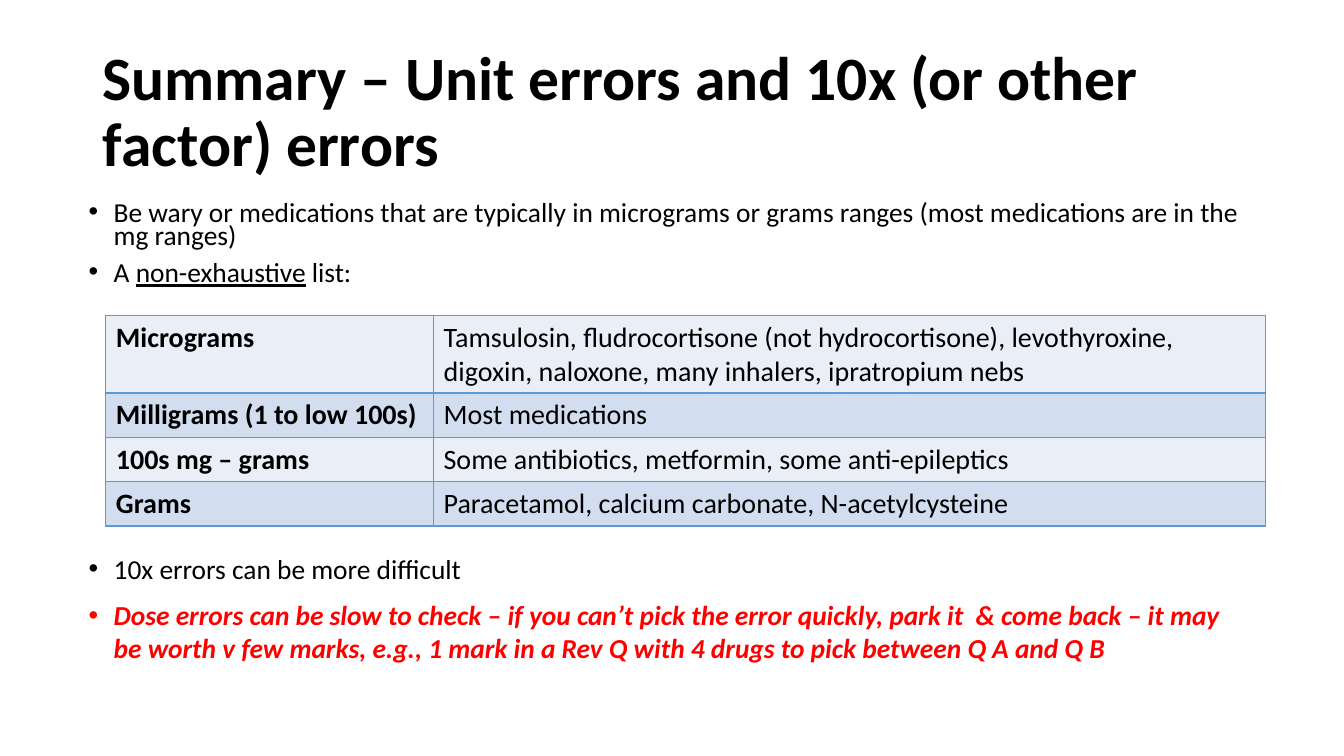
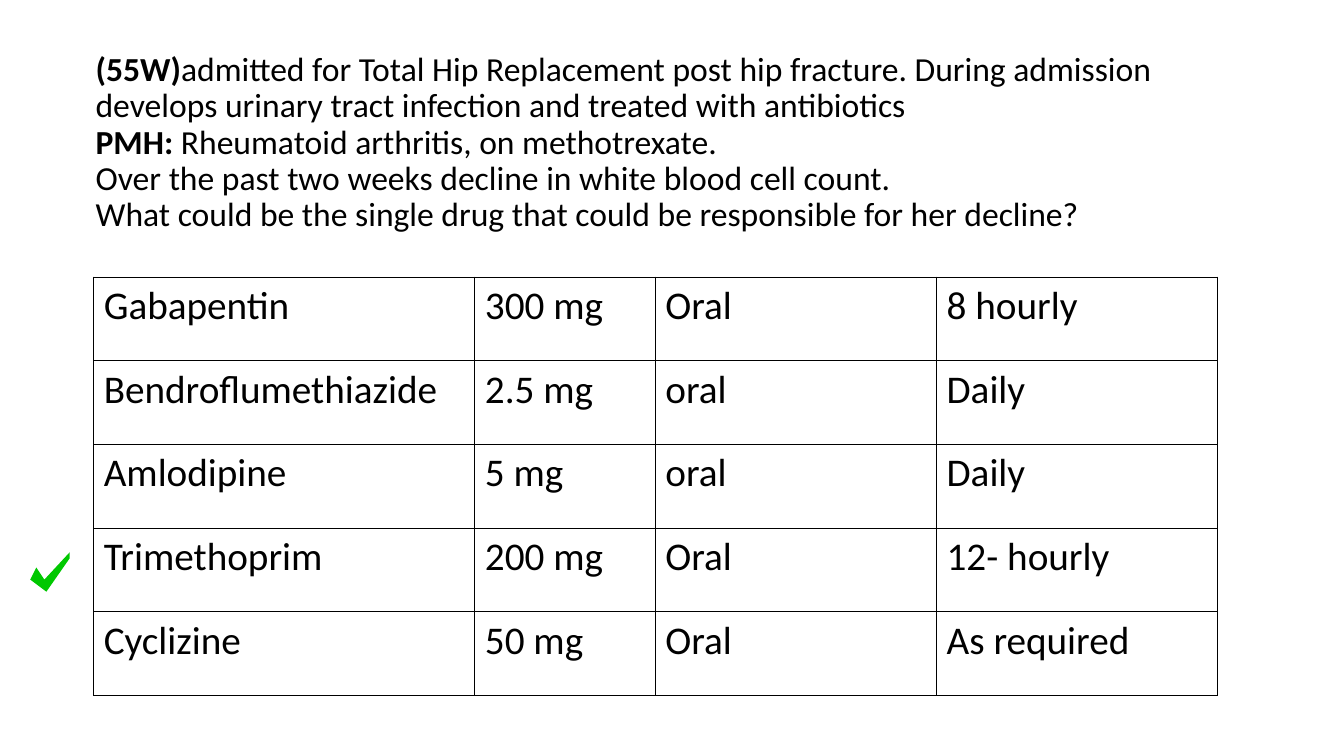
from lxml.etree import SubElement
from pptx import Presentation
from pptx.dml.color import RGBColor
from pptx.enum.text import MSO_ANCHOR
from pptx.oxml.ns import qn
from pptx.util import Inches, Pt

FONT = "Calibri"
BLACK = RGBColor(0x00, 0x00, 0x00)
RED = RGBColor(0xFF, 0x00, 0x00)
GREEN = RGBColor(0x00, 0xC8, 0x00)
BLUE = RGBColor(0x5B, 0x9B, 0xD5)
BANDS = (RGBColor(0xEA, 0xEF, 0xF7), RGBColor(0xD2, 0xDE, 0xEF))


def add_text(p, text, size, color=BLACK, bold=False, italic=False, underline=False):
    r = p.add_run()
    r.text = text
    f = r.font
    f.name, f.size, f.bold, f.italic, f.underline = FONT, Pt(size), bold, italic, underline
    f.color.rgb = color


def add_box(s, box, paragraphs, size, spacing=0.9, anchor=MSO_ANCHOR.TOP):
    """Place a text box; each paragraph is a list of (text, format) runs."""
    tf = s.shapes.add_textbox(*map(Inches, box)).text_frame
    tf.word_wrap = True
    tf.vertical_anchor = anchor
    for i, runs in enumerate(paragraphs):
        p = tf.paragraphs[0] if i == 0 else tf.add_paragraph()
        p.line_spacing = spacing
        for text, fmt in runs:
            add_text(p, text, size, **fmt)
    return tf


def add_title(s, box, lines, size):
    add_box(s, box, lines, size, anchor=MSO_ANCHOR.MIDDLE)


def add_bullets(s, box, paragraphs):
    tf = add_box(s, box, paragraphs, 19.6, spacing=0.7)
    for p in tf.paragraphs:
        p.space_before = Pt(10)
        pPr = p._p.get_or_add_pPr()
        pPr.set("marL", str(Inches(0.25)))
        pPr.set("indent", str(Inches(-0.25)))
        SubElement(pPr, qn("a:buFont"), typeface="Arial")
        SubElement(pPr, qn("a:buChar"), char="•")
    return tf


def set_borders(cell, color):
    tcPr = cell._tc.get_or_add_tcPr()
    for side in ("lnL", "lnR", "lnT", "lnB"):
        ln = SubElement(tcPr, qn(f"a:{side}"), w=str(Pt(1)))
        SubElement(SubElement(ln, qn("a:solidFill")), qn("a:srgbClr"), val=str(color))


def add_grid(s, left, top, widths, heights, rows, size, border, bands=None, bold_first=False):
    """Place a ruled table, optionally with alternating row fills."""
    frame = s.shapes.add_table(len(rows), len(widths), Inches(left), Inches(top),
                               Inches(sum(widths)), Inches(sum(heights)))
    table = frame.table
    table.first_row = table.horz_banding = False
    for col, width in zip(table.columns, widths):
        col.width = Inches(width)
    for i, (row, height) in enumerate(zip(rows, heights)):
        table.rows[i].height = Inches(height)
        for j, text in enumerate(row):
            cell = table.cell(i, j)
            set_borders(cell, border)
            if bands:
                cell.fill.solid()
                cell.fill.fore_color.rgb = bands[i % len(bands)]
            else:
                cell.fill.background()
            add_text(cell.text_frame.paragraphs[0], text, size, bold=bold_first and j == 0)


def add_tick(s, left, top):
    outline = [(0.06, 0.15), (0, 0.27), (0.16, 0.39), (0.39, 0.06), (0.39, 0), (0.14, 0.27)]
    points = [(Inches(left + x), Inches(top + y)) for x, y in outline]
    builder = s.shapes.build_freeform(*points[0])
    builder.add_line_segments(points[1:], close=True)
    sp = builder.convert_to_shape()
    sp.shadow.inherit = False
    sp.fill.solid()
    sp.fill.fore_color.rgb = GREEN
    sp.line.fill.background()


def summary_slide(s):
    bold = {"bold": True}
    add_title(s, (0.92, 0.4, 11.5, 1.45),
              [[("Summary – Unit errors and 10x (or other factor) errors", bold)]], 44)
    add_bullets(s, (0.78, 1.98, 11.7, 1.05), [
        [("Be wary or medications that are typically in micrograms or grams ranges "
          "(most medications are in the mg ranges)", {})],
        [("A ", {}), ("non-exhaustive", {"underline": True}), (" list:", {})],
    ])
    add_grid(s, 1.05, 3.13, (3.25, 8.25), (0.77, 0.44, 0.44, 0.44), [
        ("Micrograms", "Tamsulosin, fludrocortisone (not hydrocortisone), levothyroxine, "
                       "digoxin, naloxone, many inhalers, ipratropium nebs"),
        ("Milligrams (1 to low 100s)", "Most medications"),
        ("100s mg – grams", "Some antibiotics, metformin, some anti-epileptics"),
        ("Grams", "Paracetamol, calcium carbonate, N-acetylcysteine"),
    ], 20, BLUE, BANDS, bold_first=True)
    tf = add_bullets(s, (0.78, 5.52, 11.7, 1.53), [
        [("10x errors can be more difficult", {})],
        [("Dose errors can be slow to check – if you can’t pick the error quickly, park it  "
          "& come back – it may be worth v few marks, e.g., 1 mark in a Rev Q with 4 drugs "
          "to pick between Q A and Q B", {"color": RED, "bold": True, "italic": True})],
    ])
    tf.paragraphs[-1].line_spacing = 1.0


def case_slide(s):
    bold = {"bold": True}
    add_title(s, (0.85, 0.58, 11.62, 1.68), [
        [("(55W)", bold),
         ("admitted for Total Hip Replacement post hip fracture. During admission develops "
          "urinary tract infection and treated with antibiotics", {})],
        [("PMH:", bold), (" Rheumatoid arthritis, on methotrexate.", {})],
        [("Over the past two weeks decline in white blood cell count.", {})],
        [("What could be the single drug that could be responsible for her decline?", {})],
    ], 24)
    drugs = [
        ("Gabapentin", "300 mg", "Oral", "8 hourly"),
        ("Bendroflumethiazide", "2.5 mg", "oral", "Daily"),
        ("Amlodipine", "5 mg", "oral", "Daily"),
        ("Trimethoprim", "200 mg", "Oral", "12- hourly"),
        ("Cyclizine", "50 mg", "Oral", "As required"),
    ]
    add_grid(s, 0.93, 2.75, (3.78, 1.79, 2.79, 2.79), [0.83] * len(drugs), drugs, 28, BLACK)
    add_tick(s, 0.3, 5.48)


def main():
    prs = Presentation()
    prs.slide_width, prs.slide_height = Inches(13.33), Inches(7.5)
    for build in (summary_slide, case_slide):
        build(prs.slides.add_slide(prs.slide_layouts[6]))
    prs.save("out.pptx")


if __name__ == "__main__":
    main()
